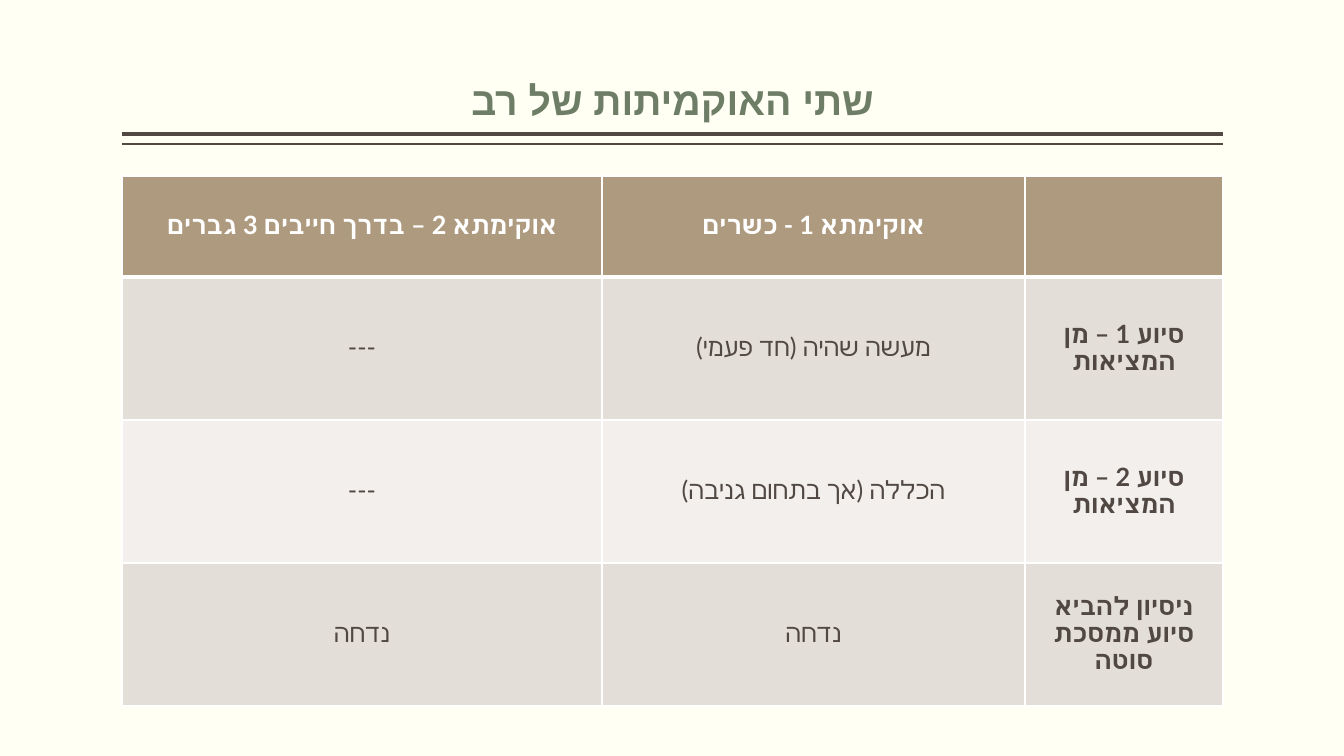
from dataclasses import dataclass

from pptx import Presentation
from pptx.dml.color import RGBColor
from pptx.enum.shapes import MSO_CONNECTOR
from pptx.enum.text import MSO_ANCHOR, PP_ALIGN
from pptx.oxml.ns import qn
from pptx.util import Pt
from lxml.etree import SubElement


@dataclass(frozen=True)
class Theme:
    background: str = "FFFFF3"
    title: str = "6D7D66"
    ink: str = "514843"
    white: str = "FFFFFF"
    header: str = "AE9A7E"
    bands: tuple = ("E3DED8", "F2EFEC")
    title_font: str = "Arial"
    body_font: str = "Lato"
    title_size: int = 28
    body_size: int = 18


THEME = Theme()
SCALE = 914400 / 100.8
ROWS = [
    ("אוקימתא 2 – בדרך חייבים 3 גברים", "אוקימתא 1 - כשרים", ""),
    ("---", "מעשה שהיה (חד פעמי)", "סיוע 1 – מן המציאות"),
    ("---", "הכללה (אך בתחום גניבה)", "סיוע 2 – מן המציאות"),
    ("נדחה", "נדחה", "ניסיון להביא סיוע ממסכת סוטה"),
]
COLUMN_WIDTHS = (480, 423, 198)
ROW_HEIGHTS = (101, 143, 143, 143)


def px(n):
    return round(n * SCALE)


def rgb(color):
    return RGBColor.from_string(color)


def write(tf, text, *, size, font, color, bold=False):
    p = tf.paragraphs[0]
    p.alignment = PP_ALIGN.CENTER
    p.line_spacing = 0.9
    p._p.get_or_add_pPr().set("rtl", "1")
    r = p.add_run()
    r.text = text
    r.font.size = Pt(size)
    r.font.name = font
    r.font.bold = bold
    r.font.color.rgb = rgb(color)
    SubElement(r._r.get_or_add_rPr(), qn("a:cs"), typeface=font)


def add_title(slide, text, left, top, width, height):
    sp = slide.shapes.title
    sp.left, sp.top, sp.width, sp.height = map(px, (left, top, width, height))
    tf = sp.text_frame
    tf.word_wrap = True
    tf.vertical_anchor = MSO_ANCHOR.BOTTOM
    tf.margin_left = tf.margin_right = 0
    tf.margin_top = tf.margin_bottom = px(5)
    write(tf, text, size=THEME.title_size, font=THEME.title_font,
          color=THEME.title, bold=True)


def add_double_rule(slide, left, top, width, gap):
    for y, weight in ((top, 3), (top + gap, 1)):
        line = slide.shapes.add_connector(
            MSO_CONNECTOR.STRAIGHT, px(left), px(y), px(left + width), px(y))
        line.line.color.rgb = rgb(THEME.ink)
        line.line.width = Pt(weight)
        SubElement(line._element.spPr, qn("a:effectLst"))


def set_borders(cell, top, bottom):
    tcPr = cell._tc.get_or_add_tcPr()
    for side, weight in (("L", 1), ("R", 1), ("T", top), ("B", bottom)):
        ln = SubElement(tcPr, qn(f"a:ln{side}"), w=str(Pt(weight)))
        fill = SubElement(ln, qn("a:solidFill"))
        SubElement(fill, qn("a:srgbClr"), val=THEME.white)


def add_comparison(slide, left, top, width, height):
    table = slide.shapes.add_table(
        len(ROWS), len(COLUMN_WIDTHS), px(left), px(top), px(width), px(height)).table
    for column, w in zip(table.columns, COLUMN_WIDTHS):
        column.width = px(w)
    for row, h in zip(table.rows, ROW_HEIGHTS):
        row.height = px(h)
    for i, texts in enumerate(ROWS):
        header = i == 0
        for j, text in enumerate(texts):
            cell = table.cell(i, j)
            set_borders(cell, top=3 if i == 1 else 1, bottom=3 if header else 1)
            cell.fill.solid()
            cell.fill.fore_color.rgb = rgb(
                THEME.header if header else THEME.bands[(i - 1) % 2])
            cell.vertical_anchor = MSO_ANCHOR.MIDDLE
            if text:
                write(cell.text_frame, text, size=THEME.body_size,
                      font=THEME.body_font,
                      color=THEME.white if header else THEME.ink,
                      bold=header or j == len(texts) - 1)


def main():
    prs = Presentation()
    prs.slide_width, prs.slide_height = px(1344), px(756)
    slide = prs.slides.add_slide(prs.slide_layouts[5])
    slide.background.fill.solid()
    slide.background.fill.fore_color.rgb = rgb(THEME.background)
    left, width = 122, sum(COLUMN_WIDTHS)
    add_double_rule(slide, left, 134, width, gap=10)
    add_title(slide, "שתי האוקמיתות של רב", left, 8, width, 121)
    add_comparison(slide, left, 176, width, sum(ROW_HEIGHTS))
    prs.save("out.pptx")


if __name__ == "__main__":
    main()
